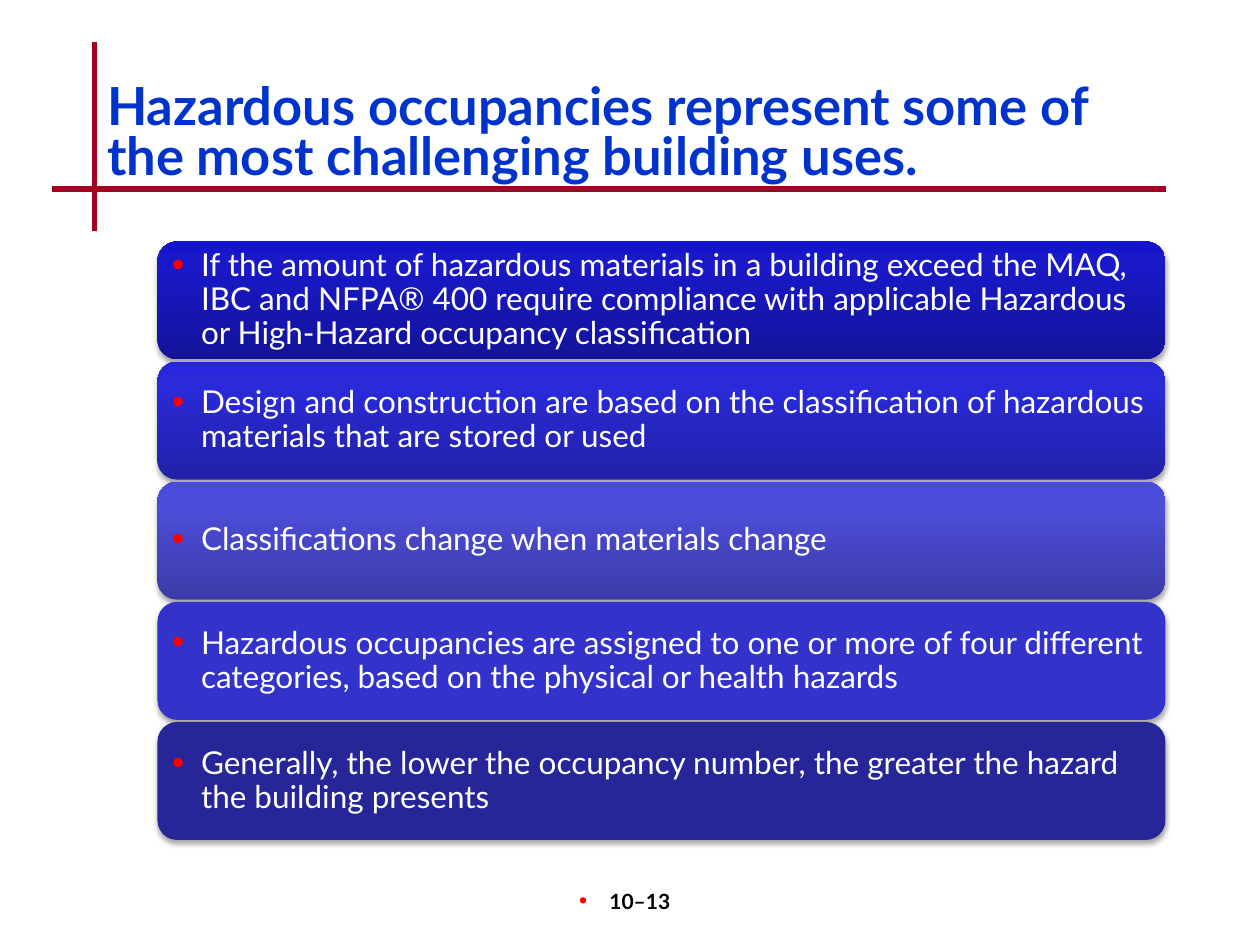
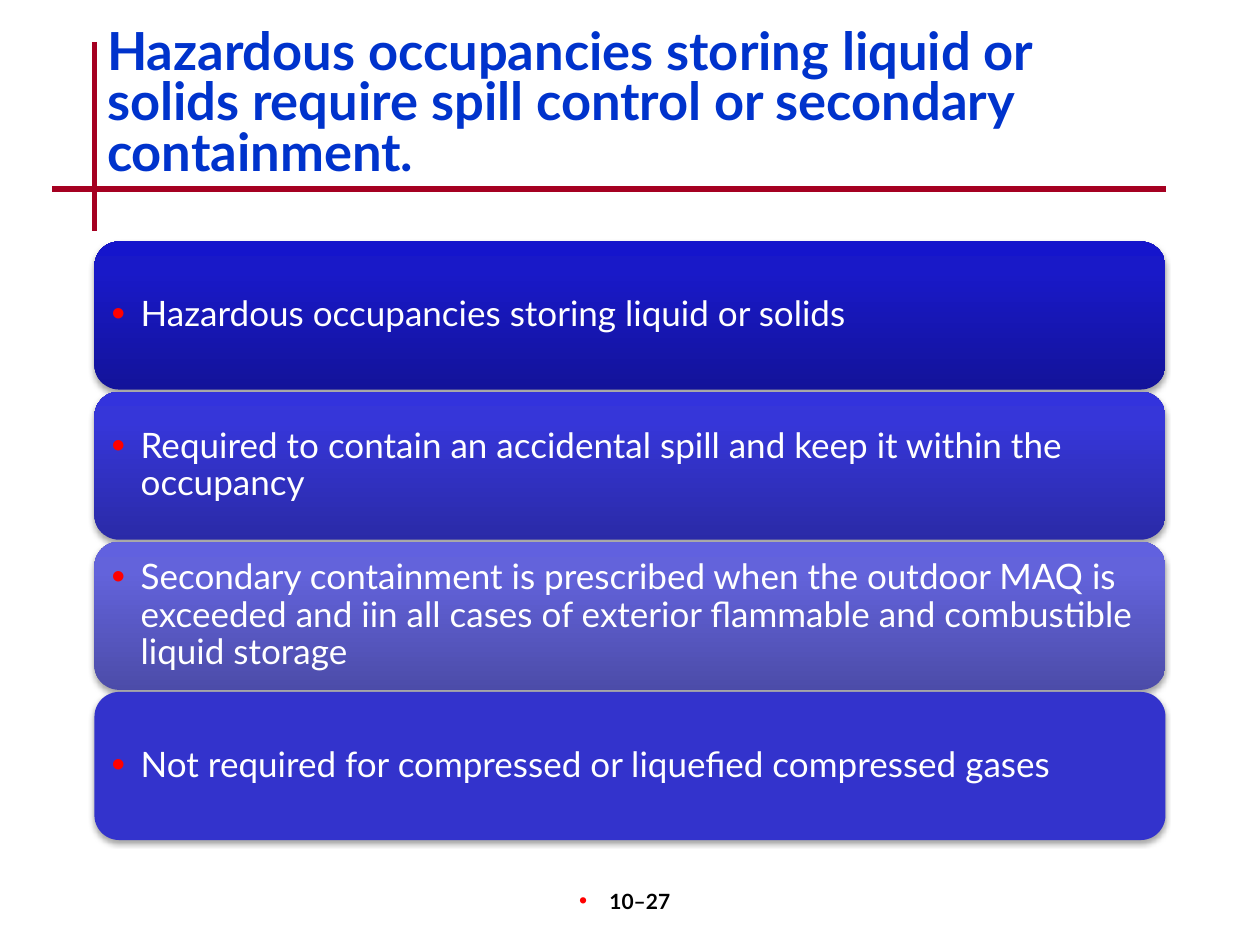
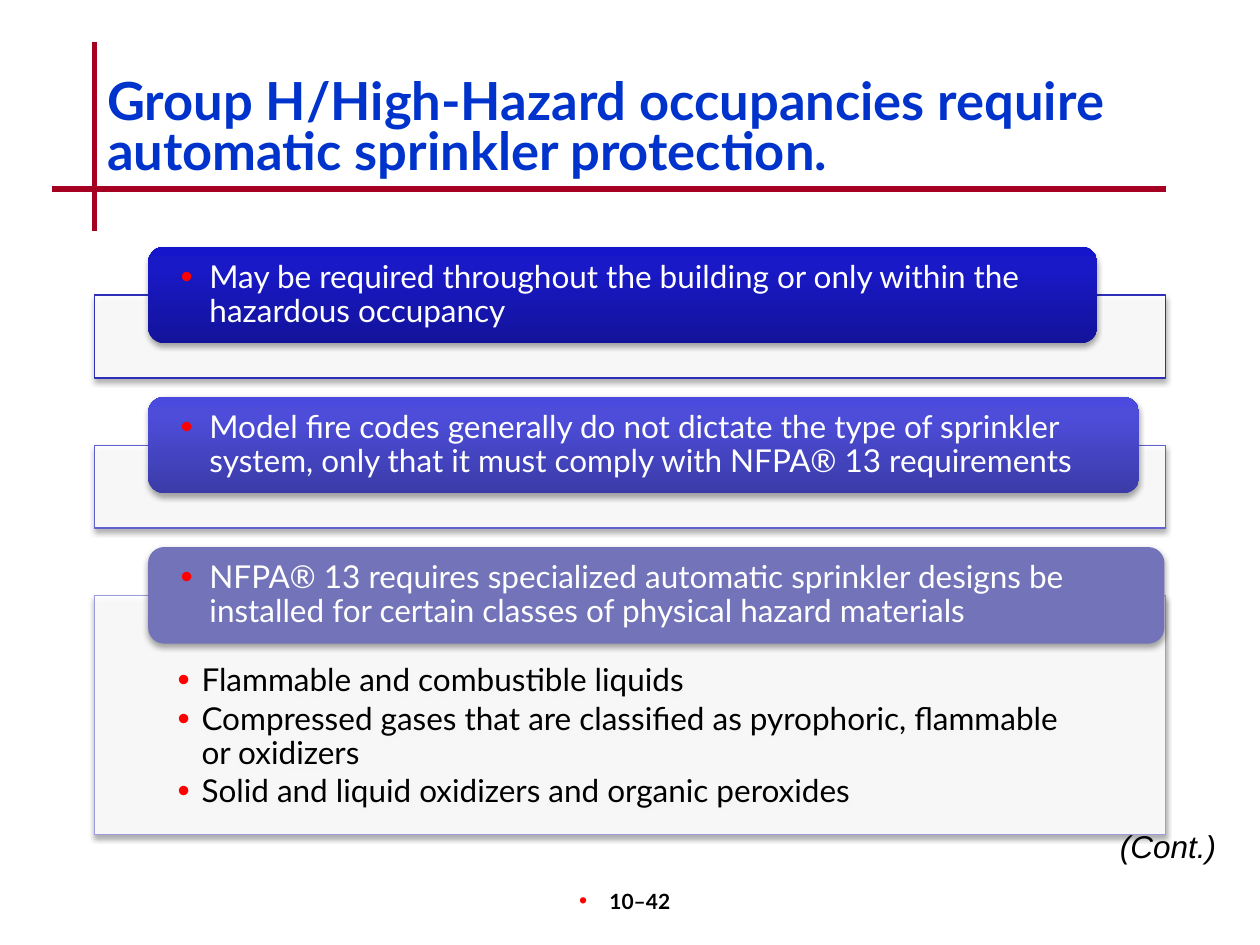
from dataclasses import dataclass

from lxml.etree import SubElement
from pptx import Presentation
from pptx.dml.color import RGBColor
from pptx.enum.shapes import MSO_CONNECTOR as Connector, MSO_SHAPE as Shape
from pptx.enum.text import MSO_ANCHOR as Anchor, MSO_AUTO_SIZE as AutoSize, PP_ALIGN as Align
from pptx.oxml.ns import qn
from pptx.util import Emu, Inches, Pt

# The slide is a grid of 120 columns and 90 rows.
COLS, ROWS = 120, 90
WIDTH, HEIGHT = Inches(10), Inches(7.5)

COLORS = {
    "title": "0033CC", "rule": "A50021", "bullet": "FF0000",
    "white": "FFFFFF", "black": "000000",
}
# Gradient stops from the bottom of a card to its top, at 0, 80 and 100 %.
STOPS = (0, 80, 100)
GRADIENTS = {
    "deep": ("13139A", "1919C8", "1515CC"),
    "royal": ("2121A7", "2A2AD9", "2727DD"),
    "bright": ("2A2AA7", "3636D9", "3333DD"),
    "medium": ("3B3BA8", "4D4DDA", "4A4ADE"),
    "soft": ("4C4CA9", "6363DB", "6161DF"),
    "plain": ("3333CC",),
    "navy": ("262699",),
    "lilac": ("7373B9",),
}
RIGHT_EDGE, STACK_TOP, STACK_BOTTOM, STACK_GAP = 111, 23, 80, 0.2
STEP_TOP, STEP_PITCH, STEP_HEIGHT, STEP_LEFT = 23.5, 14.3, 9.2, 14.1
PANEL_LEFT, PANEL_DROP = 9, 4.6


@dataclass
class Box:
    """A place on the grid, in columns and rows."""
    col: float
    row: float
    cols: float
    rows: float

    def emu(self) -> tuple[Emu, ...]:
        return (Emu(round(WIDTH * self.col / COLS)), Emu(round(HEIGHT * self.row / ROWS)),
                Emu(round(WIDTH * self.cols / COLS)), Emu(round(HEIGHT * self.rows / ROWS)))


@dataclass
class Card:
    text: str
    gradient: str


@dataclass
class Step:
    """A card that overlaps a bordered panel, with an optional list in the panel."""
    card: Card
    cols: float
    panel_rows: float
    border: str
    details: tuple[str, ...] = ()


def rgb(value: str) -> RGBColor:
    return RGBColor.from_string(value)


def add(parent, tag: str, **attrs):
    return SubElement(parent, qn(tag), {k: str(v) for k, v in attrs.items()})


def add_bullet(p, hang: float) -> None:
    pPr = p._p.get_or_add_pPr()
    pPr.set("marL", str(Inches(hang)))
    pPr.set("indent", str(-Inches(hang)))
    add(add(pPr, "a:buClr"), "a:srgbClr", val=COLORS["bullet"])
    add(pPr, "a:buSzPct", val=110000)
    add(pPr, "a:buFont", typeface="Arial")
    add(pPr, "a:buChar", char="•")


def write(tf, *lines: str, size: float = 18, color: str = "black", font: str = "Lato",
          bold: bool = False, italic: bool = False, align=Align.LEFT, anchor=Anchor.TOP,
          spacing: float = 1, after: float = 0, hang: float = 0,
          insets: tuple[float, ...] = (0.1, 0.05, 0.1, 0.05)) -> None:
    tf.word_wrap, tf.auto_size, tf.vertical_anchor = True, AutoSize.NONE, anchor
    tf.margin_left, tf.margin_top, tf.margin_right, tf.margin_bottom = map(Inches, insets)
    for i, line in enumerate(lines):
        p = tf.add_paragraph() if i else tf.paragraphs[0]
        if hang:
            add_bullet(p, hang)
        p.alignment, p.line_spacing = align, spacing
        p.space_before, p.space_after = Pt(0), Pt(after)
        r = p.add_run()
        r.text = line
        f = r.font
        f.name, f.size, f.bold, f.italic = font, Pt(size), bold, italic
        f.color.rgb = rgb(COLORS[color])


def add_shadow(sp) -> None:
    sp.shadow.inherit = False
    effects = sp._element.spPr.find(qn("a:effectLst"))
    shadow = add(effects, "a:outerShdw", blurRad=Pt(3.1), dist=Pt(1.8),
                 dir=5400000, rotWithShape=0)
    add(add(shadow, "a:srgbClr", val=COLORS["black"]), "a:alpha", val=35000)


def fill_gradient(sp, colors: tuple[str, ...]) -> None:
    if len(colors) == 1:
        sp.fill.solid()
        sp.fill.fore_color.rgb = rgb(colors[0])
        return
    sp.fill.gradient()
    sp.fill.gradient_angle = 90
    stops = sp._element.spPr.find(qn("a:gradFill")).find(qn("a:gsLst"))
    for old in list(stops):
        stops.remove(old)
    for pos, color in zip(STOPS, colors):
        add(add(stops, "a:gs", pos=pos * 1000), "a:srgbClr", val=color)


def draw_card(s, card: Card, box: Box, size: float, insets: tuple[float, ...]) -> None:
    sp = s.shapes.add_shape(Shape.ROUNDED_RECTANGLE, *box.emu())
    fill_gradient(sp, GRADIENTS[card.gradient])
    sp.line.fill.background()
    add_shadow(sp)
    write(sp.text_frame, card.text, size=size, color="white", anchor=Anchor.MIDDLE,
          spacing=0.9, hang=0.23, insets=insets)


def draw_stack(s, cards: list[Card], left: float, size: float, inset: float) -> None:
    """Share the height of the body equally among the cards."""
    pitch = (STACK_BOTTOM - STACK_TOP + STACK_GAP) / len(cards)
    for i, card in enumerate(cards):
        box = Box(left, STACK_TOP + i * pitch, RIGHT_EDGE - left, pitch - STACK_GAP)
        draw_card(s, card, box, size, (inset,) * 4)


def draw_step(s, step: Step, row: float) -> None:
    box = Box(PANEL_LEFT, row + PANEL_DROP, RIGHT_EDGE - PANEL_LEFT, step.panel_rows)
    panel = s.shapes.add_shape(Shape.RECTANGLE, *box.emu())
    panel.fill.solid()
    panel.fill.fore_color.rgb = rgb(COLORS["white"])
    add(panel._element.spPr.find(qn("a:solidFill"))[0], "a:alpha", val=90000)
    panel.line.color.rgb, panel.line.width = rgb(step.border), Pt(0.75)
    add_shadow(panel)
    if step.details:
        write(panel.text_frame, *step.details, spacing=0.9, after=2.5, hang=0.19,
              insets=(0.66, 0.55, 0.66, 0.14))
    draw_card(s, step.card, Box(STEP_LEFT, row, step.cols, STEP_HEIGHT), 18,
              (0.22, 0, 0.22, 0))


def draw_rule(s, col: float, row: float, cols: float, rows: float) -> None:
    x, y, w, h = Box(col, row, cols, rows).emu()
    line = s.shapes.add_connector(Connector.STRAIGHT, x, y, x + w, y + h)
    line.line.color.rgb, line.line.width = rgb(COLORS["rule"]), Pt(3)
    add(line._element.spPr, "a:effectLst")


def add_text(s, box: Box, text: str, **style) -> None:
    write(s.shapes.add_textbox(*box.emu()).text_frame, text, **style)


def new_slide(prs, title: str, title_row: float, number: str):
    s = prs.slides.add_slide(prs.slide_layouts[5])
    draw_rule(s, 9, 4, 0, 18)
    draw_rule(s, 5, 18, 106, 0)
    sp = s.shapes.title
    sp.left, sp.top, sp.width, sp.height = Box(9, title_row, 102, 14).emu()
    write(sp.text_frame, title, size=30, color="title", bold=True, spacing=0.8)
    add_text(s, Box(47, 84, 25, 6), number, size=12, bold=True, align=Align.CENTER, hang=0.24)
    return s


def main() -> None:
    prs = Presentation()
    prs.slide_width, prs.slide_height = WIDTH, HEIGHT

    s = new_slide(prs, "Hazardous occupancies represent some of the most challenging "
                  "building uses.", 7.5, "10–13")
    draw_stack(s, [
        Card("If the amount of hazardous materials in a building exceed the MAQ, IBC and "
             "NFPA® 400 require compliance with applicable Hazardous or High-Hazard "
             "occupancy classification", "deep"),
        Card("Design and construction are based on the classification of hazardous "
             "materials that are stored or used", "royal"),
        Card("Classifications change when materials change", "medium"),
        Card("Hazardous occupancies are assigned to one or more of four different "
             "categories, based on the physical or health hazards", "plain"),
        Card("Generally, the lower the occupancy number, the greater the hazard the "
             "building presents", "navy"),
    ], left=15, size=18, inset=0.07)

    s = new_slide(prs, "Hazardous occupancies storing liquid or solids require spill "
                  "control or secondary containment.", 2.25, "10–27")
    draw_stack(s, [
        Card("Hazardous occupancies storing liquid or solids", "deep"),
        Card("Required to contain an accidental spill and keep it within the occupancy",
             "bright"),
        Card("Secondary containment is prescribed when the outdoor MAQ is exceeded and "
             "iin all cases of exterior flammable and combustible liquid storage", "soft"),
        Card("Not required for compressed or liquefied compressed gases", "plain"),
    ], left=9, size=20, inset=0.08)

    s = new_slide(prs, "Group H/High-Hazard occupancies require automatic sprinkler "
                  "protection.", 7, "10–42")
    steps = [
        Step(Card("May be required throughout the building or only within the hazardous "
                  "occupancy", "deep"), 90.4, 7.9, "2E2EB9"),
        Step(Card("Model fire codes generally do not dictate the type of sprinkler system, "
                  "only that it must comply with NFPA® 13 requirements", "medium"),
             94.4, 7.9, "6060D0"),
        Step(Card("NFPA® 13 requires specialized automatic sprinkler designs be installed "
                  "for certain classes of physical hazard materials", "lilac"),
             96.8, 22.8, "9C9CDD",
             ("Flammable and combustible liquids",
              "Compressed gases that are classified as pyrophoric, flammable or oxidizers",
              "Solid and liquid oxidizers and organic peroxides")),
    ]
    for i, step in enumerate(steps):
        draw_step(s, step, STEP_TOP + i * STEP_PITCH)
    add_text(s, Box(97, 78.2, 20, 4.8), "(Cont.)", font="Arial", italic=True,
             align=Align.RIGHT)

    prs.save("out.pptx")


if __name__ == "__main__":
    main()
